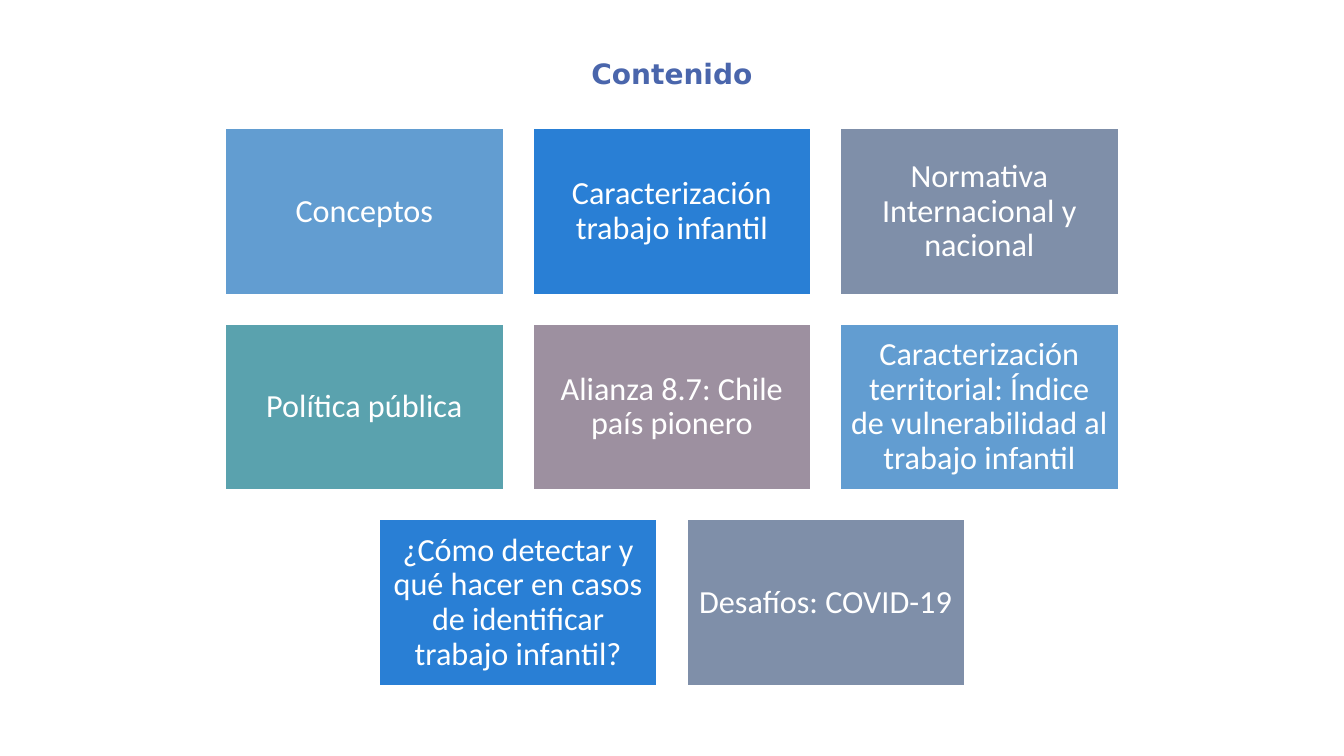
from pptx import Presentation
from pptx.dml.color import RGBColor
from pptx.enum.shapes import MSO_SHAPE
from pptx.enum.text import MSO_ANCHOR, PP_ALIGN
from pptx.util import Inches, Pt

TITLE = "Contenido"
TOPIC_ROWS = [
    [("Conceptos", "sky"),
     ("Caracterización trabajo infantil", "blue"),
     ("Normativa Internacional y nacional", "slate")],
    [("Política pública", "teal"),
     ("Alianza 8.7: Chile país pionero", "mauve"),
     ("Caracterización territorial: Índice de vulnerabilidad al trabajo infantil", "sky")],
    [("¿Cómo detectar y qué hacer en casos de identificar trabajo infantil?", "blue"),
     ("Desafíos: COVID-19", "slate")],
]

THEME = {
    "colors": {
        "title": "4A66AC", "white": "FFFFFF", "sky": "629DD1", "blue": "297FD5",
        "slate": "7F8FA9", "teal": "5AA2AE", "mauve": "9D90A0",
    },
    "title_font": "DejaVu Sans", "title_size": 20,
    "card_font": "Calibri", "card_size": 23,
}

SLIDE_WIDTH, SLIDE_HEIGHT = 13.33, 7.5
CARD_WIDTH, CARD_HEIGHT, GAP = 2.77, 1.66, 0.28
GRID_TOP = 1.27
INSET = 0.1


def color(name):
    return RGBColor.from_string(THEME["colors"][name])


def write(frame, text, role, color_name, bold=False):
    frame.word_wrap = True
    para = frame.paragraphs[0]
    para.text = text
    para.alignment = PP_ALIGN.CENTER
    para.font.name = THEME[f"{role}_font"]
    para.font.size = Pt(THEME[f"{role}_size"])
    para.font.bold = bold
    para.font.color.rgb = color(color_name)
    return para


def add_card(page, left, top, text, fill_name):
    card = page.shapes.add_shape(MSO_SHAPE.RECTANGLE, Inches(left), Inches(top),
                                 Inches(CARD_WIDTH), Inches(CARD_HEIGHT))
    card.shadow.inherit = False
    card.fill.solid()
    card.fill.fore_color.rgb = color(fill_name)
    card.line.color.rgb = color("white")
    card.line.width = Pt(2)
    frame = card.text_frame
    frame.vertical_anchor = MSO_ANCHOR.MIDDLE
    frame.margin_left = frame.margin_right = Inches(INSET)
    frame.margin_top = frame.margin_bottom = Inches(INSET)
    write(frame, text, "card", "white").line_spacing = 0.9


def main():
    deck = Presentation()
    deck.slide_width, deck.slide_height = Inches(SLIDE_WIDTH), Inches(SLIDE_HEIGHT)
    page = deck.slides.add_slide(deck.slide_layouts[6])

    box = page.shapes.add_textbox(Inches(2.83), Inches(0.51), Inches(7.67), Inches(0.6))
    write(box.text_frame, TITLE, "title", "title", bold=True)

    for row, topics in enumerate(TOPIC_ROWS):
        row_width = len(topics) * (CARD_WIDTH + GAP) - GAP
        row_left = (SLIDE_WIDTH - row_width) / 2
        top = GRID_TOP + row * (CARD_HEIGHT + GAP)
        for column, (text, fill_name) in enumerate(topics):
            left = row_left + column * (CARD_WIDTH + GAP)
            add_card(page, left, top, text, fill_name)

    deck.save("out.pptx")


if __name__ == "__main__":
    main()
